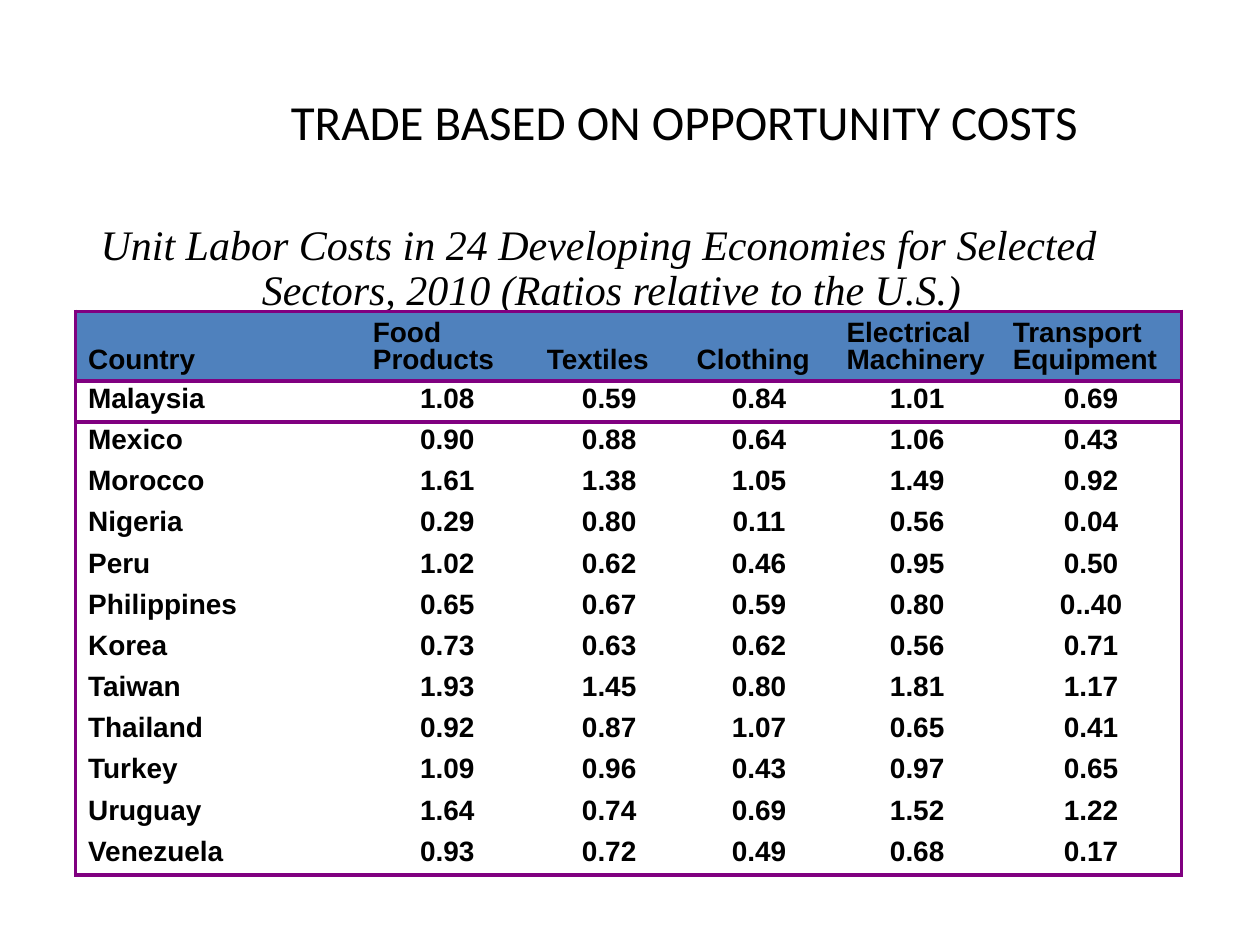
from lxml import etree
from pptx import Presentation
from pptx.dml.color import RGBColor
from pptx.enum.text import MSO_ANCHOR, PP_ALIGN
from pptx.oxml.ns import qn
from pptx.util import Inches, Pt

LEFT, MID = PP_ALIGN.LEFT, PP_ALIGN.CENTER
TOP, HALF, LOW = MSO_ANCHOR.TOP, MSO_ANCHOR.MIDDLE, MSO_ANCHOR.BOTTOM

THEME = {
    "head": "4F81BD",
    "rule": "800080",
    "line": Pt(2.25),
    "plain": "{2D5ABB26-0587-4C30-8999-92F81FD0307C}",
    "title": {"name": "Calibri", "size": Pt(28)},
    "sub": {"name": "Times New Roman", "size": Pt(24), "italic": True},
    "cell": {"name": "Arial", "size": Pt(16), "bold": True},
}
INK = RGBColor(0, 0, 0)

HEADS = ["Country", "Food Products", "Textiles", "Clothing",
         "Electrical Machinery", "Transport Equipment"]
COSTS = [
    ["Malaysia", "1.08", "0.59", "0.84", "1.01", "0.69"],
    ["Mexico", "0.90", "0.88", "0.64", "1.06", "0.43"],
    ["Morocco", "1.61", "1.38", "1.05", "1.49", "0.92"],
    ["Nigeria", "0.29", "0.80", "0.11", "0.56", "0.04"],
    ["Peru", "1.02", "0.62", "0.46", "0.95", "0.50"],
    ["Philippines", "0.65", "0.67", "0.59", "0.80", "0..40"],
    ["Korea", "0.73", "0.63", "0.62", "0.56", "0.71"],
    ["Taiwan", "1.93", "1.45", "0.80", "1.81", "1.17"],
    ["Thailand", "0.92", "0.87", "1.07", "0.65", "0.41"],
    ["Turkey", "1.09", "0.96", "0.43", "0.97", "0.65"],
    ["Uruguay", "1.64", "0.74", "0.69", "1.52", "1.22"],
    ["Venezuela", "0.93", "0.72", "0.49", "0.68", "0.17"],
]

deck = Presentation()
deck.slide_width, deck.slide_height = Inches(10), Inches(7.5)
COL, ROW = deck.slide_width / 100, deck.slide_height / 75
slide = deck.slides.add_slide(deck.slide_layouts[6])


def span(x, y, w, h):
    return int(x * COL), int(y * ROW), int(w * COL), int(h * ROW)


def write(frame, text, style, align):
    para = frame.paragraphs[0]
    para.alignment = align
    run = para.add_run()
    run.text = text
    for key, val in THEME[style].items():
        setattr(run.font, key, val)
    run.font.color.rgb = INK
    return para


title = slide.shapes.add_textbox(*span(13.6, 3.7, 81.4, 11.8)).text_frame
title.word_wrap = True
title.vertical_anchor = HALF
write(title, "TRADE BASED ON OPPORTUNITY COSTS", "title", MID)

sub = slide.shapes.add_textbox(*span(7, 17.3, 84.8, 8.3)).text_frame
sub.word_wrap = True
para = write(sub, "Unit Labor Costs in 24 Developing Economies for Selected "
             "Sectors, 2010 (Ratios relative to the U.S.)", "sub", LEFT)
para.line_spacing = 0.9
dent = int(12.8 * COL)
for key, val in {"marL": dent, "indent": -dent}.items():
    para._p.get_or_add_pPr().set(key, str(val))

data = [HEADS] + COSTS
wide = [22.6, 13.8, 11.9, 11.9, 13.2, 14.4]
tall = [5.5] + [39.2 / len(COSTS)] * len(COSTS)
grid = slide.shapes.add_table(
    len(data), len(HEADS), *span(6, 24.7, sum(wide), sum(tall))).table
grid.first_row = grid.horz_banding = False
grid._tbl.tblPr.find(qn("a:tableStyleId")).text = THEME["plain"]
for band, size in zip(grid.columns, wide):
    band.width = int(size * COL)
for band, size in zip(grid.rows, tall):
    band.height = int(size * ROW)

for r, texts in enumerate(data):
    for c, text in enumerate(texts):
        cell = grid.cell(r, c)
        cell.vertical_anchor = TOP if r else LOW
        para = write(cell.text_frame, text, "cell", MID if r and c else LEFT)
        para.line_spacing = 0.85
        gap = etree.SubElement(para._p.get_or_add_pPr(), qn("a:spcBef"))
        etree.SubElement(gap, qn("a:spcPct"), val="20000")
        edges = {"a:lnL": c == 0, "a:lnR": c == len(HEADS) - 1,
                 "a:lnT": r < 2, "a:lnB": r in (0, len(COSTS))}
        for tag, drawn in edges.items():
            if drawn:
                edge = etree.SubElement(cell._tc.get_or_add_tcPr(), qn(tag),
                                        w=str(THEME["line"]))
                fill = etree.SubElement(edge, qn("a:solidFill"))
                etree.SubElement(fill, qn("a:srgbClr"), val=THEME["rule"])
        if r:
            cell.fill.background()
        else:
            cell.fill.solid()
            cell.fill.fore_color.rgb = RGBColor.from_string(THEME["head"])

deck.save("out.pptx")
